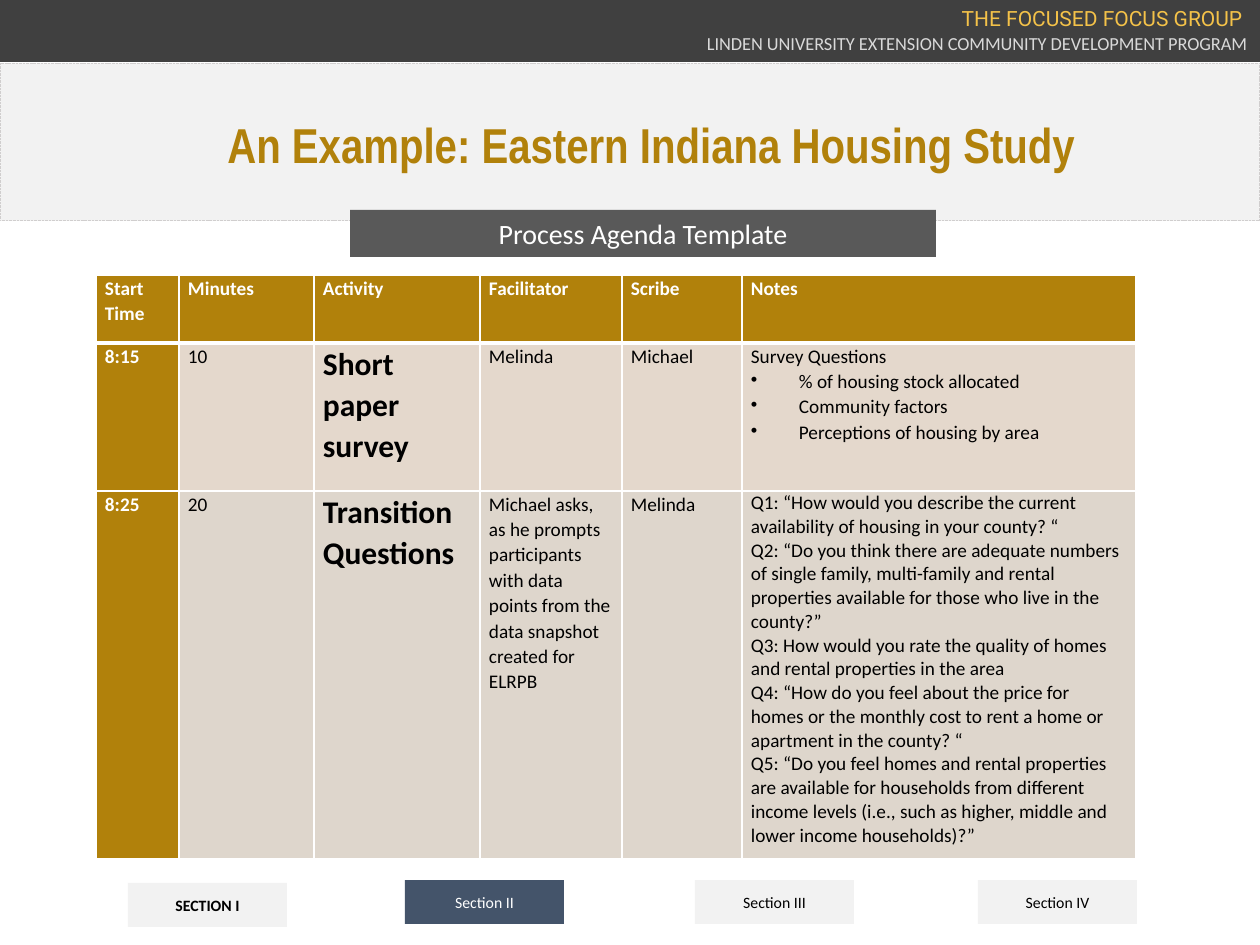
"""Builds the process agenda slide of a focus group study."""
from lxml import etree
from pptx import Presentation
from pptx.dml.color import RGBColor
from pptx.enum.dml import MSO_LINE
from pptx.enum.shapes import MSO_SHAPE
from pptx.enum.text import MSO_ANCHOR, PP_ALIGN
from pptx.oxml import parse_xml
from pptx.oxml.ns import nsdecls, qn
from pptx.util import Pt

PX = 914400 / 126
RECT = MSO_SHAPE.RECTANGLE
DASH = MSO_LINE.SQUARE_DOT
LEFT, CENTER, RIGHT = PP_ALIGN.LEFT, PP_ALIGN.CENTER, PP_ALIGN.RIGHT
TOP, MIDDLE = MSO_ANCHOR.TOP, MSO_ANCHOR.MIDDLE
GOLD, WHITE, BLACK, PALE = "B1810B", "FFFFFF", "000000", "F2F2F2"


def paint(color_format, color):
    color_format.solid()
    color_format.fore_color.rgb = RGBColor.from_string(color)


def write(frame, text, size=11, color=BLACK, bold=False, font="Calibri",
          align=LEFT, anchor=TOP, spacing=None):
    frame.word_wrap = True
    frame.vertical_anchor = anchor
    for index, line in enumerate(text.split("\n")):
        paragraph = frame.add_paragraph() if index else frame.paragraphs[0]
        paragraph.alignment = align
        paragraph.line_spacing = spacing
        if line.startswith("•"):
            properties = paragraph._p.get_or_add_pPr()
            properties.set("marL", str(round(48 * PX)))
            properties.set("indent", str(round(-48 * PX)))
            etree.SubElement(properties, qn("a:buChar")).set("char", "•")
        run = paragraph.add_run()
        run.text = line.lstrip("• ")
        run.font.size = Pt(size)
        run.font.name = font
        run.font.bold = bold
        run.font.color.rgb = RGBColor.from_string(color)


deck = Presentation()
deck.slide_width, deck.slide_height = round(1260 * PX), round(945 * PX)
slide = deck.slides.add_slide(deck.slide_layouts[6])

panels = [
    ((0, 63, 1260, 158), PALE, "", {}),
    ((0, -5, 1261, 67), "404040", "", {}),
    ((350, 210, 586, 47), "595959", "Process Agenda Template",
     dict(size=16, color=WHITE, align=CENTER)),
]
sections = [
    (128, 883, PALE, "SECTION I", BLACK),
    (405, 880, "44546A", "Section II", WHITE),
    (695, 880, PALE, "Section III", BLACK),
    (978, 880, PALE, "Section IV", BLACK),
]
for left, top, fill, label, ink in sections:
    look = dict(size=9, color=ink, bold=label.isupper(), align=CENTER, anchor=MIDDLE)
    panels.append(((left, top, 159, 44), fill, label, look))

for box, fill, label, look in panels:
    panel = slide.shapes.add_shape(RECT, *[round(v * PX) for v in box])
    panel.shadow.inherit = False
    paint(panel.fill, fill)
    if box[1] == 63:
        paint(panel.line.fill, "D0CECE")
        panel.line.width = Pt(0.5)
        panel.line.dash_style = DASH
    else:
        panel.line.fill.background()
    if label:
        write(panel.text_frame, label, **look)

headings = [
    ((166, 108, 970, 72), "An Example: Eastern Indiana Housing Study",
     dict(size=28, color=GOLD, bold=True, font="Arial Narrow", align=CENTER)),
    ((437, 26, 823, 35), "LINDEN UNIVERSITY EXTENSION COMMUNITY DEVELOPMENT PROGRAM",
     dict(size=10.5, color="D9D9D9", align=RIGHT)),
    ((444, -1, 811, 38), "THE FOCUSED FOCUS GROUP",
     dict(size=12, color="F4C249", font="Roboto", align=RIGHT)),
]
for box, label, look in headings:
    heading = slide.shapes.add_textbox(*[round(v * PX) for v in box])
    write(heading.text_frame, label, **look)

columns = [83, 135, 166, 142, 120, 394]
header = ["Start Time", "Minutes", "Activity", "Facilitator", "Scribe", "Notes"]
survey = [
    "8:15", "10", "Short paper survey", "Melinda", "Michael",
    "Survey Questions\n• % of housing stock allocated\n• Community factors\n"
    "• Perceptions of housing by area",
]
transition = [
    "8:25", "20", "Transition Questions",
    "Michael asks, as he prompts participants with data points from the data "
    "snapshot created for ELRPB",
    "Melinda",
    "Q1: “How would you describe the current availability of housing in your county? “\n"
    "Q2: “Do you think there are adequate numbers of single family, multi-family and "
    "rental properties available for those who live in the county?”\n"
    "Q3: How would you rate the quality of homes and rental properties in the area\n"
    "Q4: “How do you feel about the price for homes or the monthly cost to rent a home "
    "or apartment in the county? “\n"
    "Q5: “Do you feel homes and rental properties are available for households from "
    "different income levels (i.e., such as higher, middle and lower income households)?”",
]
agendas = [
    (275, [68, 268], [header, survey], "E4D8CC"),
    (491, [368], [transition], "DED6CC"),
]
for top, heights, rows, tint in agendas:
    frame = slide.shapes.add_table(
        len(rows), len(columns), round(96 * PX), round(top * PX),
        round(sum(columns) * PX), round(sum(heights) * PX))
    agenda = frame.table
    agenda.first_row = agenda.horz_banding = False
    for column, width in zip(agenda.columns, columns):
        column.width = round(width * PX)
    for r, (height, entries) in enumerate(zip(heights, rows)):
        agenda.rows[r].height = round(height * PX)
        for c, entry in enumerate(entries):
            cell = agenda.cell(r, c)
            strong = entries is header or c == 0
            activity = c == 2 and not strong
            cell.margin_left = cell.margin_right = round(9 * PX)
            cell.margin_top = cell.margin_bottom = 0
            paint(cell.fill, GOLD if strong else tint)
            write(cell.text_frame, entry, size=18 if activity else 11,
                  color=WHITE if strong else BLACK, bold=strong or activity,
                  spacing=None if entry.startswith("Q1") else 1.07)
            for place, side in enumerate("LRTB"):
                heavy = (side == "B" and entries is header) or (side == "T" and entries is survey)
                border = parse_xml(
                    f'<a:ln{side} {nsdecls("a")} w="{Pt(3 if heavy else 1)}"><a:solidFill>'
                    f'<a:srgbClr val="{WHITE}"/></a:solidFill></a:ln{side}>')
                cell._tc.get_or_add_tcPr().insert(place, border)

deck.save("out.pptx")
